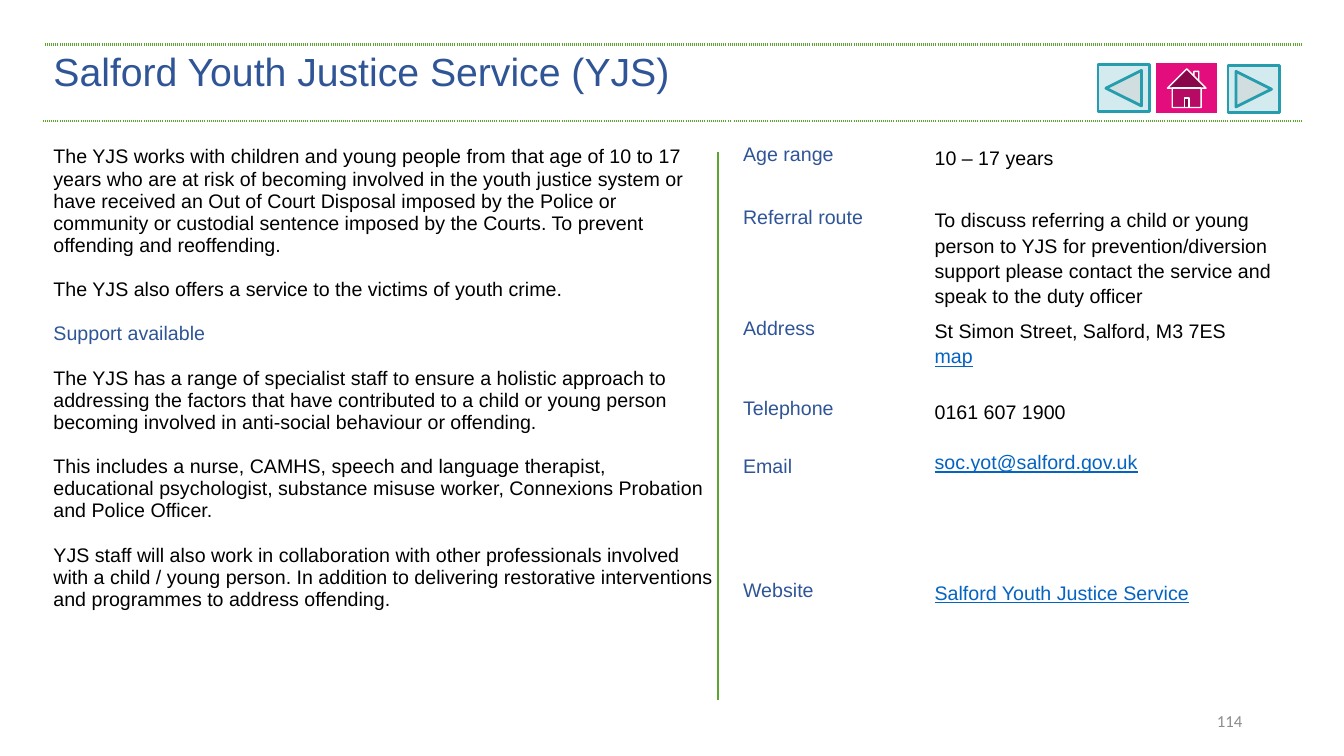
from lxml import etree
from pptx import Presentation
from pptx import util as u
from pptx.dml.color import RGBColor
from pptx.enum import shapes, text
from pptx.oxml.ns import qn

COLOURS = {
    "heading": "2F5597", "body": "000000", "link": "0563C1", "rule": "5CA532",
    "teal": "259DAC", "pink": "E40D7E", "white": "FFFFFF", "page": "8C8C8C",
}
UNIT = u.Inches(0.1)


def colour(name):
    return RGBColor.from_string(COLOURS[name])


def grid(*cells):
    return [int(cell * UNIT) for cell in cells]


def write(frame, wording, first=False, size=14, ink="body", font="Arial",
          before=0, spacing=1.0, align=text.PP_ALIGN.LEFT):
    paragraph = frame.paragraphs[0] if first else frame.add_paragraph()
    paragraph.alignment = align
    paragraph.line_spacing = spacing
    paragraph.space_before = u.Pt(before)
    run = paragraph.add_run()
    run.text = wording
    run.font.size = u.Pt(size)
    run.font.name = font
    run.font.color.rgb = colour(ink)
    if ink == "link":
        run.font.underline = True


class DirectorySlide:
    def __init__(self, deck):
        self.slide = deck.slides.add_slide(deck.slide_layouts[6])

    def table(self, left, top, columns, rows):
        frame = self.slide.shapes.add_table(
            len(rows), len(columns), *grid(left, top, sum(columns), sum(rows)))
        table = frame.table
        table.first_row = table.horz_banding = False
        for column, width in zip(table.columns, grid(*columns)):
            column.width = width
        for row, height in zip(table.rows, grid(*rows)):
            row.height = height
        for r in range(len(rows)):
            for c in range(len(columns)):
                cell = table.cell(r, c)
                cell.fill.background()
                cell.margin_top = cell.margin_bottom = 0
                cell.margin_left = cell.margin_right = UNIT
                ruled = {0: "TB", 1: "T"}.get(r, "")
                for position, side in enumerate("LRTB"):
                    self.border(cell, position, side, side in ruled)
        return table

    def border(self, cell, position, side, ruled):
        properties = cell._tc.get_or_add_tcPr()
        edge = etree.Element(qn(f"a:ln{side}"), w=str(u.Pt(2.25 if ruled else 1)))
        fill = etree.SubElement(edge, qn("a:solidFill"))
        etree.SubElement(fill, qn("a:srgbClr"), val=COLOURS["rule" if ruled else "white"])
        etree.SubElement(edge, qn("a:prstDash"), val="sysDot" if ruled else "solid")
        properties.insert(position, edge)

    def fill_cell(self, cell, paragraphs, top=0.0, **common):
        cell.margin_top = int(top * UNIT)
        for index, (wording, extra) in enumerate(paragraphs):
            write(cell.text_frame, wording, first=index == 0, **{**common, **extra})

    def line(self, left, top, right, bottom):
        divider = self.slide.shapes.add_connector(
            shapes.MSO_CONNECTOR.STRAIGHT, *grid(left, top, right, bottom))
        divider.line.color.rgb = colour("rule")
        divider.line.width = u.Pt(1.25)
        etree.SubElement(divider._element.spPr, qn("a:effectLst"))

    def button(self, kind, box, fill, outline, width, opacity=100):
        button = self.slide.shapes.add_shape(kind, *grid(*box))
        button.shadow.inherit = False
        button.fill.solid()
        button.fill.fore_color.rgb = colour(fill)
        button.line.color.rgb = colour(outline)
        button.line.width = u.Pt(width)
        if opacity < 100:
            tint = button._element.spPr.find(qn("a:solidFill"))[0]
            etree.SubElement(tint, qn("a:alpha"), val=str(opacity * 1000))

    def label(self, wording, box, **style):
        frame = self.slide.shapes.add_textbox(*grid(*box)).text_frame
        frame.word_wrap = True
        frame.vertical_anchor = text.MSO_ANCHOR.MIDDLE
        write(frame, wording, first=True, **style)


def main():
    deck = Presentation()
    deck.slide_width, deck.slide_height = u.Inches(13.33), u.Inches(7.5)
    page = DirectorySlide(deck)

    service = page.table(4.3, 4.4, [68.4, 19, 37.3], [7.6, 8.5, 11, 8, 18, 7.2])
    title = service.cell(0, 0)
    title.merge(service.cell(0, 2))
    title.vertical_anchor = text.MSO_ANCHOR.MIDDLE
    title.margin_bottom = 2 * UNIT
    page.fill_cell(title, [("Salford Youth Justice Service (YJS)", {})],
                   size=28, ink="heading")

    gap = {"before": 16}
    about = service.cell(1, 0)
    about.merge(service.cell(5, 0))
    page.fill_cell(about, [
        ("The YJS works with children and young people from that age of 10 to 17 years who are at risk "
         "of becoming involved in the youth justice system or have received an Out of Court Disposal "
         "imposed by the Police or", {}),
        ("community or custodial sentence imposed by the Courts. To prevent offending and reoffending.", {}),
        ("The YJS also offers a service to the victims of youth crime.", gap),
        ("Support available", {**gap, "ink": "heading"}),
        ("The YJS has a range of specialist staff to ensure a holistic approach to addressing the factors "
         "that have contributed to a child or young person becoming involved in anti-social behaviour "
         "or offending.", gap),
        ("This includes a nurse, CAMHS, speech and language therapist,", gap),
        ("educational psychologist, substance misuse worker, Connexions Probation and Police Officer.", {}),
        ("YJS staff will also work in collaboration with other professionals involved", gap),
        ("with a child / young person. In addition to delivering restorative interventions and programmes "
         "to address offending.", {}),
    ], top=2.5)

    link = {"ink": "link"}
    justified = {"align": text.PP_ALIGN.JUSTIFY}
    details = [
        ([("Age range", {})], [("10 – 17 years", {})]),
        ([("Referral route", {})],
         [("To discuss referring a child or young person to YJS for prevention/diversion support "
           "please contact the service and speak to the duty officer", {})]),
        ([("Address", {})],
         [("St Simon Street, Salford, M3 7ES", justified), ("map", {**link, **justified})]),
        ([("Telephone", {}), ("Email", {"before": 25})],
         [("0161 607 1900", {}), ("soc.yot@salford.gov.uk", {**link, "before": 18})]),
        ([("Website", {})], [("Salford Youth Justice Service", link)]),
    ]
    for row, (names, values) in enumerate(details, start=1):
        top = 2.3 if row == 1 else 0
        page.fill_cell(service.cell(row, 1), names, top, ink="heading")
        page.fill_cell(service.cell(row, 2), values, top, spacing=1.15)

    page.label("114", (94.2, 69.5, 30, 4), size=12, font="Calibri", ink="page",
               align=text.PP_ALIGN.RIGHT)
    page.line(71.2, 15.1, 71.2, 69.4)
    kinds = shapes.MSO_SHAPE
    page.button(kinds.ACTION_BUTTON_HOME, (114.6, 6.2, 6.2, 5.1), "pink", "white", 1)
    for kind, left, top in ((kinds.ACTION_BUTTON_FORWARD_OR_NEXT, 121.8, 6.5),
                            (kinds.ACTION_BUTTON_BACK_OR_PREVIOUS, 108.9, 6.4)):
        page.button(kind, (left, top, 5.1, 4.7), "teal", "teal", 2, opacity=20)

    deck.save("out.pptx")


if __name__ == "__main__":
    main()
